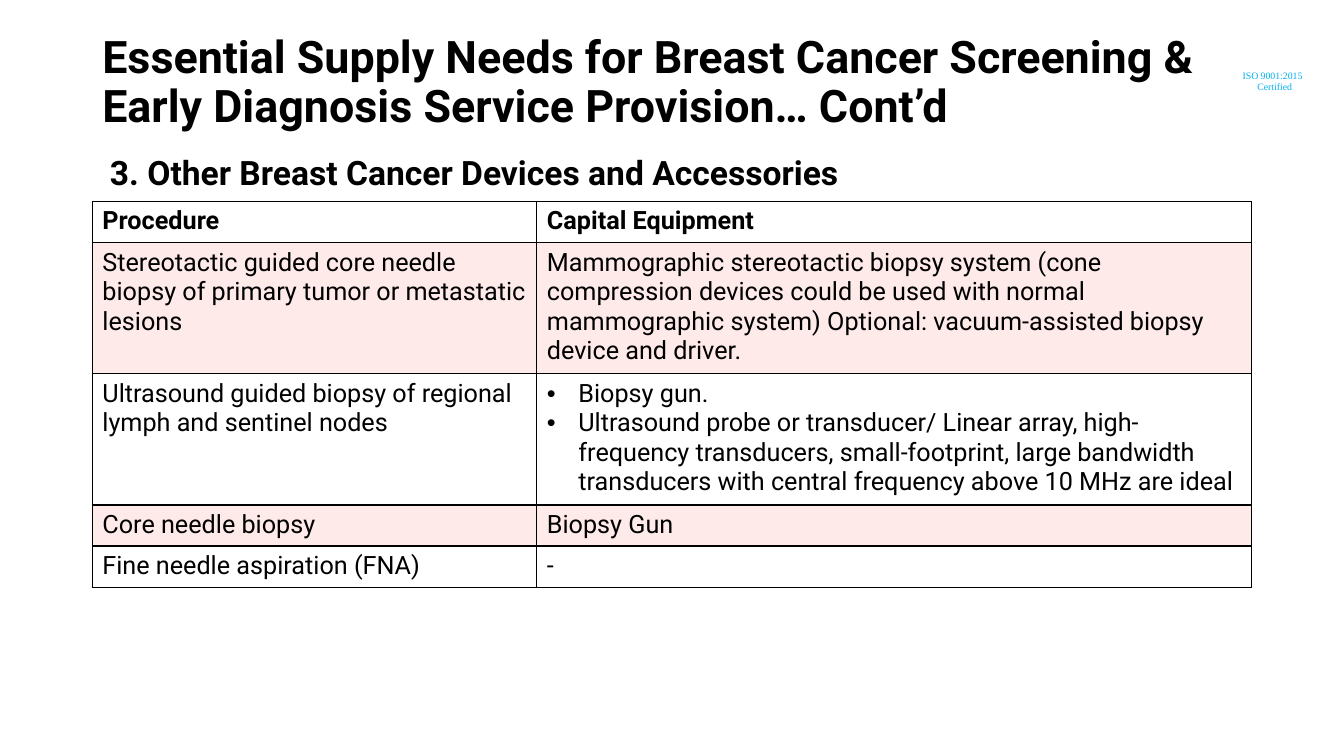
from lxml import etree
from pptx import Presentation
from pptx.dml.color import RGBColor
from pptx.enum import text
from pptx.oxml import ns
from pptx.util import Pt

BODY_FONT = "Roboto"
BLACK = "000000"
PINK = "FF9999"
WHITE = "FFFFFF"
COLUMN_WIDTHS = [317.5, 510.5]
ROW_HEIGHTS = [29.4, 91.4, 91.4, 29.4, 29.4]
SUPPLIES = [
    ("Procedure", "Capital Equipment"),
    ("Stereotactic guided core needle biopsy of primary tumor or metastatic lesions",
     "Mammographic stereotactic biopsy system (cone compression devices could be used "
     "with normal mammographic system) Optional: vacuum-assisted biopsy device and driver."),
    ("Ultrasound guided biopsy of regional lymph and sentinel nodes",
     ["Biopsy gun.",
      "Ultrasound probe or transducer/ Linear array, high-frequency transducers, "
      "small-footprint, large bandwidth transducers with central frequency above "
      "10 MHz are ideal"]),
    ("Core needle biopsy", "Biopsy Gun"),
    ("Fine needle aspiration (FNA)", "-"),
]


def color(value):
    return RGBColor.from_string(value)


def add_xml(parent, tag, **attributes):
    return etree.SubElement(parent, ns.qn(tag), attributes)


def set_font(para, size, bold=False, name=BODY_FONT, ink=BLACK):
    para.font.name = name
    para.font.size = Pt(size)
    para.font.bold = bold
    para.font.color.rgb = color(ink)


def add_bullet(para):
    properties = para._p.get_or_add_pPr()
    properties.set("marL", str(Pt(22.5)))
    properties.set("indent", str(Pt(-22.5)))
    add_xml(properties, "a:buFont", typeface="Arial")
    add_xml(properties, "a:buChar", char="•")


def add_paragraphs(frame, lines):
    """Write the lines into the frame and return their paragraphs."""
    frame.text = "\n".join(lines)
    return frame.paragraphs


def add_text(page, left, top, width, height, lines, size, spacing=1.0,
             anchor=text.MSO_ANCHOR.TOP, **font):
    box = page.shapes.add_textbox(Pt(left), Pt(top), Pt(width), Pt(height))
    box.text_frame.word_wrap = True
    box.text_frame.vertical_anchor = anchor
    paras = add_paragraphs(box.text_frame, lines)
    for para in paras:
        para.line_spacing = spacing
        set_font(para, size, **font)
    return paras


def add_borders(cell):
    properties = cell._tc.get_or_add_tcPr()
    for side in ("a:lnL", "a:lnR", "a:lnT", "a:lnB"):
        line = add_xml(properties, side, w=str(Pt(1)))
        add_xml(add_xml(line, "a:solidFill"), "a:srgbClr", val=BLACK)


def fill_tint(cell, value):
    """Fill the cell with a colour at 20% opacity."""
    cell.fill.solid()
    cell.fill.fore_color.rgb = color(value)
    swatch = cell._tc.tcPr.find(ns.qn("a:solidFill")).find(ns.qn("a:srgbClr"))
    add_xml(swatch, "a:alpha", val="20000")


def fill_cell(cell, content, row):
    bulleted = isinstance(content, list)
    for para in add_paragraphs(cell.text_frame, content if bulleted else [content]):
        if bulleted:
            add_bullet(para)
        set_font(para, 18, bold=row == 0)
    add_borders(cell)
    if row == 0:
        cell.fill.background()
    else:
        fill_tint(cell, PINK if row % 2 else WHITE)


def add_supply_table(page, left, top):
    table = page.shapes.add_table(
        len(SUPPLIES), len(COLUMN_WIDTHS), Pt(left), Pt(top),
        Pt(sum(COLUMN_WIDTHS)), Pt(sum(ROW_HEIGHTS))).table
    table.horz_banding = False
    for column, width in zip(table.columns, COLUMN_WIDTHS):
        column.width = Pt(width)
    for row, (height, contents) in enumerate(zip(ROW_HEIGHTS, SUPPLIES)):
        table.rows[row].height = Pt(height)
        for column, content in enumerate(contents):
            fill_cell(table.cell(row, column), content, row)


def main():
    deck = Presentation()
    deck.slide_width, deck.slide_height = Pt(960), Pt(540)
    page = deck.slides.add_slide(deck.slide_layouts[6])

    certificate = add_text(page, 880.5, 46, 60, 24.5, ["ISO 9001:2015", "Certified"], 7,
                           name="Times New Roman", ink="00B0F0")
    certificate[1].alignment = text.PP_ALIGN.CENTER
    add_text(page, 66, 20, 828, 79,
             ["Essential Supply Needs for Breast Cancer Screening & "
              "Early Diagnosis Service Provision… Cont’d"],
             32, spacing=0.9, anchor=text.MSO_ANCHOR.MIDDLE, bold=True)
    add_text(page, 71.5, 99.5, 817, 42.5,
             ["3. Other Breast Cancer Devices and Accessories"],
             24, spacing=1.2, bold=True)
    add_supply_table(page, 66, 144)

    deck.save("out.pptx")


if __name__ == "__main__":
    main()
